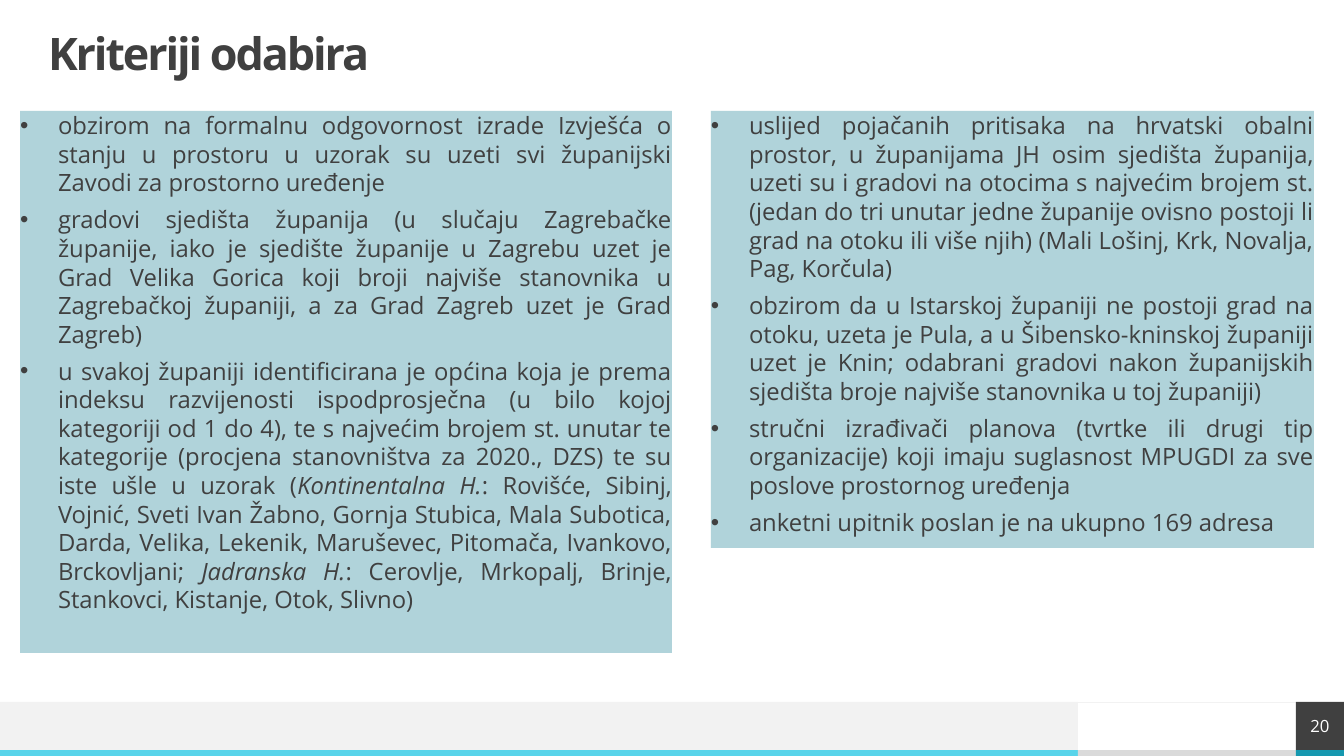
from lxml.etree import SubElement as Sub
from pptx import Presentation
from pptx.dml.color import RGBColor as Color
from pptx.enum.shapes import MSO_CONNECTOR as Link, MSO_SHAPE as Form
from pptx.enum.text import MSO_ANCHOR as Anchor, PP_ALIGN as Align
from pptx.oxml.ns import qn
from pptx.util import Pt

PX = 914400 / 100.8
WIDE, HIGH = 1344, 756
THEME = {
    "font": "Open Sans", "ink": "404040", "white": "FFFFFF", "pale": "F2F2F2",
    "panel": "127C8F", "alpha": "33000",
    "strips": ["58D4EA", "DADADA", "1698AF"],
    "title": 32, "body": 17, "number": 12,
}

deck = Presentation()
deck.slide_width, deck.slide_height = round(WIDE * PX), round(HIGH * PX)
slide = deck.slides.add_slide(deck.slide_layouts[6])
shapes = slide.shapes


def add_box(left, top, width, height, fill=None):
    """Add a rectangle, or a text box if there is no fill, with zero margins."""
    area = [round(n * PX) for n in (left, top, width, height)]
    if fill:
        box = shapes.add_shape(Form.RECTANGLE, *area)
        box.shadow.inherit = False
        box.fill.solid()
        box.fill.fore_color.rgb = Color.from_string(fill)
        box.line.fill.background()
    else:
        box = shapes.add_textbox(*area)
    frame = {"margin_left": 0, "margin_right": 0, "margin_top": 0, "margin_bottom": 0,
             "word_wrap": True, "vertical_anchor": Anchor.MIDDLE}
    for key, value in frame.items():
        setattr(box.text_frame, key, value)
    return box


def add_run(para, text, size, ink=THEME["ink"], **style):
    run = para.add_run()
    run.text = text
    style = {"name": THEME["font"], "size": Pt(size), **style}
    for key, value in style.items():
        setattr(run.font, key, value)
    run.font.color.rgb = Color.from_string(ink)
    return run


# Footer
foot, strip = 702, 750
edges = [0, 1078, 1296, WIDE]
add_box(0, foot, edges[1], strip - foot, THEME["pale"])
for left, right, fill in zip(edges, edges[1:], THEME["strips"]):
    add_box(left, strip, right - left, HIGH - strip, fill)
rule = shapes.add_connector(Link.STRAIGHT, round(WIDE * PX), round(foot * PX), 0, round(foot * PX))
rule.line.width = Pt(0.5)
rule.line.color.rgb = Color.from_string(THEME["pale"])
Sub(rule._element.spPr, qn("a:effectLst"))

badge = add_box(edges[2], foot, WIDE - edges[2], strip - foot, THEME["ink"])
para = badge.text_frame.paragraphs[0]
para.alignment = Align.CENTER
add_run(para, "20", THEME["number"], THEME["white"])

# Title
title = add_box(48, 28, 351, 55)
para = title.text_frame.paragraphs[0]
para.line_spacing = 0.9
run = add_run(para, "Kriteriji odabira", THEME["title"], bold=True)
run.font._element.set("spc", "-150")

# Panels: each paragraph is a list of runs, every second run in italics
panels = [
    ((20, 111, 652, 542), [
        ["obzirom na formalnu odgovornost izrade Izvješća o stanju u prostoru u uzorak su uzeti "
         "svi županijski Zavodi za prostorno uređenje"],
        ["gradovi sjedišta županija (u slučaju Zagrebačke županije, iako je sjedište županije u "
         "Zagrebu uzet je Grad Velika Gorica koji broji najviše stanovnika u Zagrebačkoj "
         "županiji, a za Grad Zagreb uzet je Grad Zagreb)"],
        ["u svakoj županiji identificirana je općina koja je prema indeksu razvijenosti "
         "ispodprosječna (u bilo kojoj kategoriji od 1 do 4), te s najvećim brojem st. unutar te "
         "kategorije (procjena stanovništva za 2020., DZS) te su iste ušle u uzorak (",
         "Kontinentalna H.",
         ": Rovišće, Sibinj, Vojnić, Sveti Ivan Žabno, Gornja Stubica, Mala Subotica, Darda, "
         "Velika, Lekenik, Maruševec, Pitomača, Ivankovo, Brckovljani; ",
         "Jadranska H.",
         ": Cerovlje, Mrkopalj, Brinje, Stankovci, Kistanje, Otok, Slivno)"],
    ]),
    ((711, 111, 603, 437), [
        ["uslijed pojačanih pritisaka na hrvatski obalni prostor, u županijama JH osim sjedišta "
         "županija, uzeti su i gradovi na otocima s najvećim brojem st. (jedan do tri unutar "
         "jedne županije ovisno postoji li grad na otoku ili više njih) (Mali Lošinj, Krk, "
         "Novalja, Pag, Korčula)"],
        ["obzirom da u Istarskoj županiji ne postoji grad na otoku, uzeta je Pula, a u "
         "Šibensko-kninskoj županiji uzet je Knin; odabrani gradovi nakon županijskih sjedišta "
         "broje najviše stanovnika u toj županiji)"],
        ["stručni izrađivači planova (tvrtke ili drugi tip organizacije) koji imaju suglasnost "
         "MPUGDI za sve poslove prostornog uređenja"],
        ["anketni upitnik poslan je na ukupno 169 adresa"],
    ]),
]
indent = round(38 * PX)
for area, points in panels:
    panel = add_box(*area, THEME["panel"])
    tint = panel.fill._xPr.find(qn("a:solidFill"))[0]
    Sub(tint, qn("a:alpha"), val=THEME["alpha"])
    frame = panel.text_frame
    frame.vertical_anchor = Anchor.TOP
    for index, parts in enumerate(points):
        para = frame.add_paragraph() if index else frame.paragraphs[0]
        look = {"alignment": Align.JUSTIFY, "line_spacing": 1.0,
                "space_before": Pt(3 if index else 0), "space_after": Pt(3)}
        for key, value in look.items():
            setattr(para, key, value)
        props = para._p.get_or_add_pPr()
        props.set("marL", str(indent))
        props.set("indent", str(-indent))
        Sub(props, qn("a:buFont"), typeface="Arial")
        Sub(props, qn("a:buChar"), char="•")
        for place, text in enumerate(parts):
            add_run(para, text, THEME["body"], italic=place % 2 == 1)

deck.save("out.pptx")
